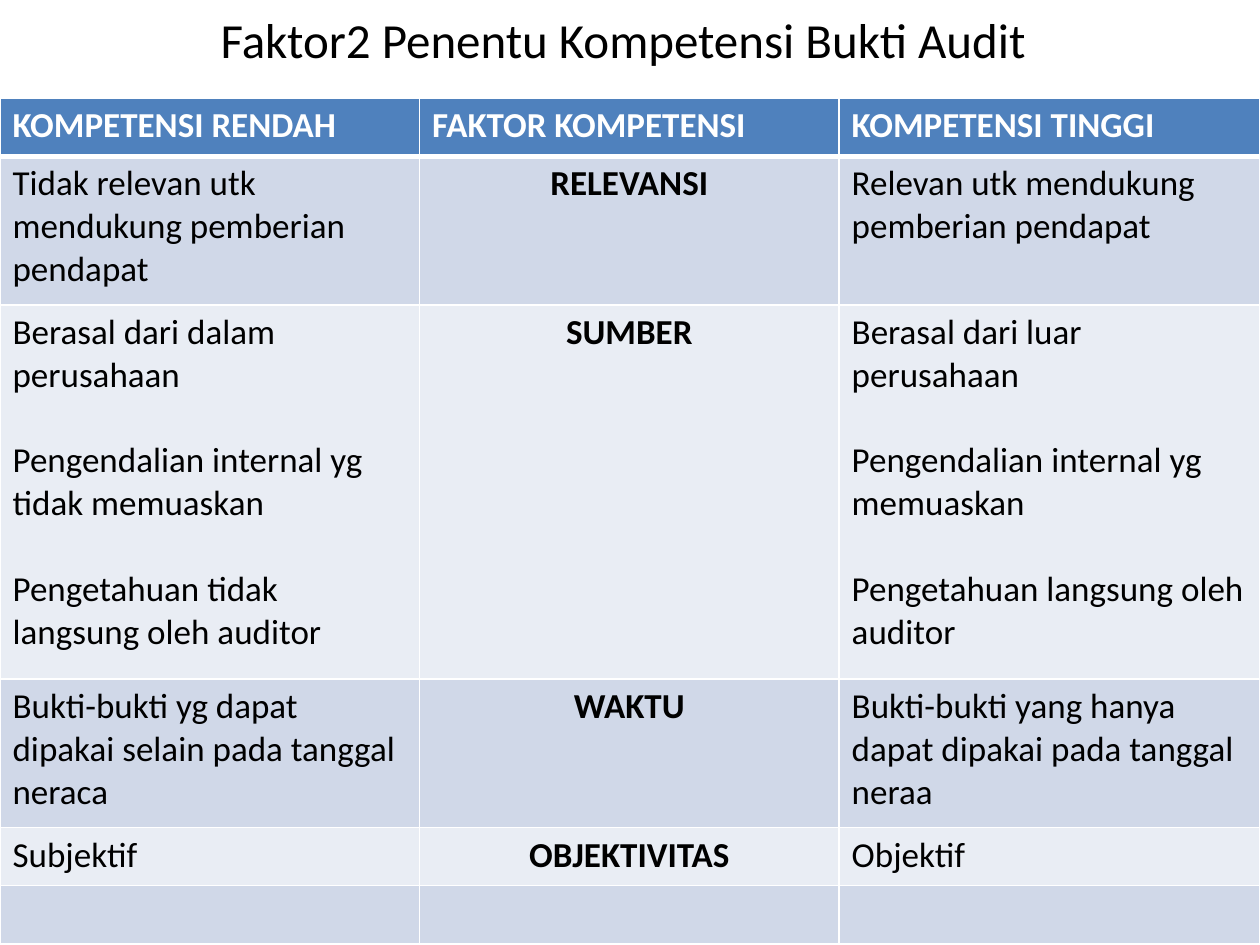
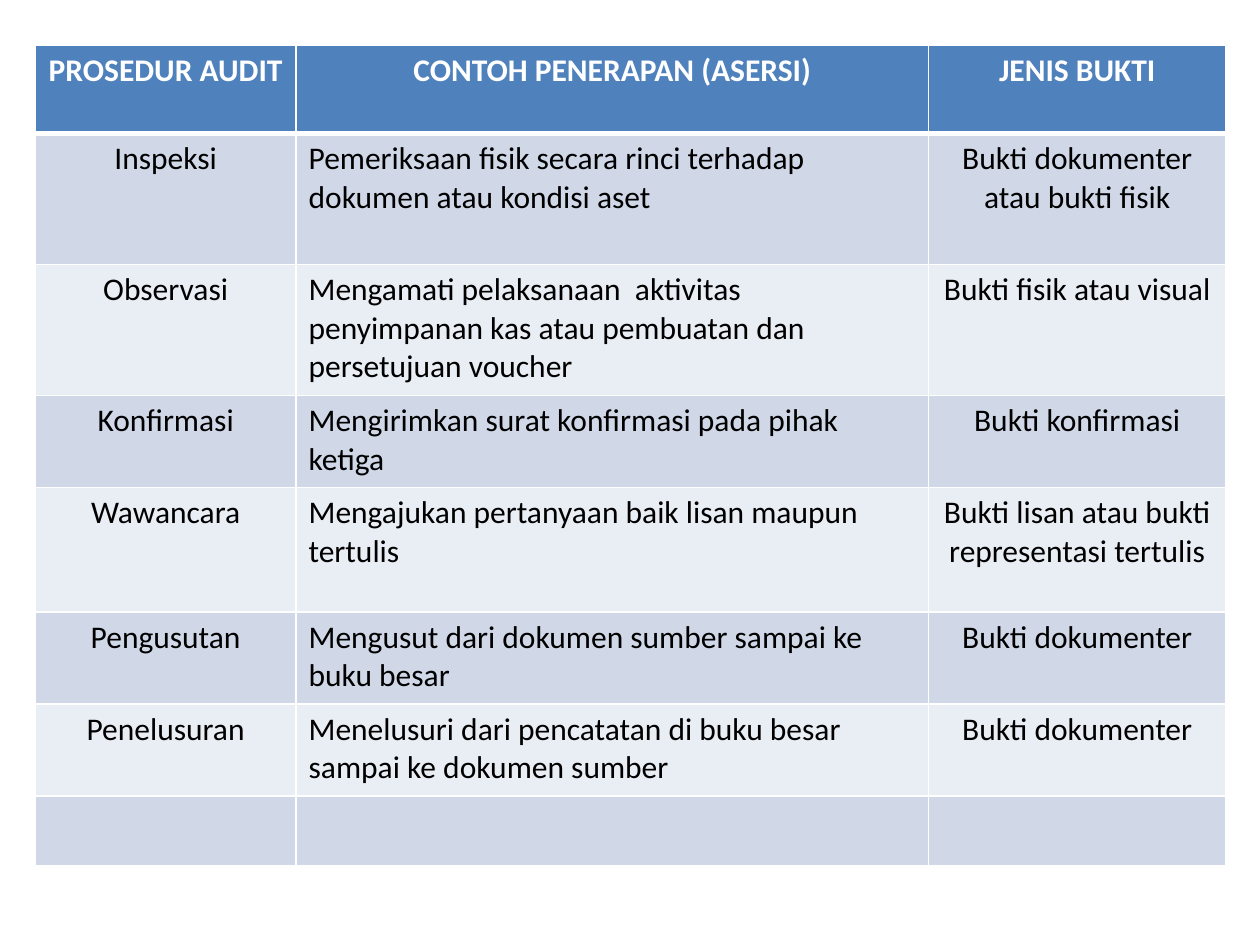
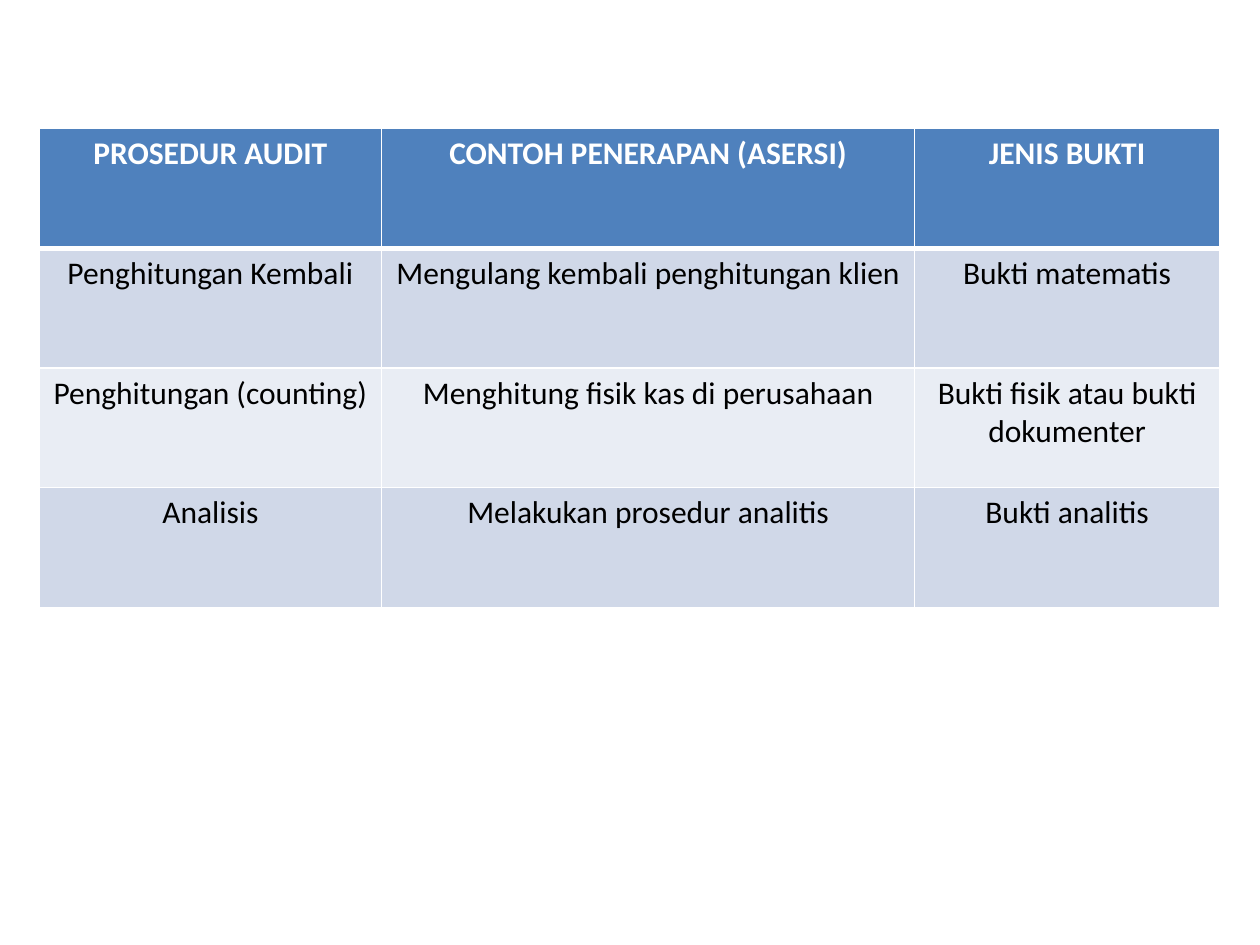
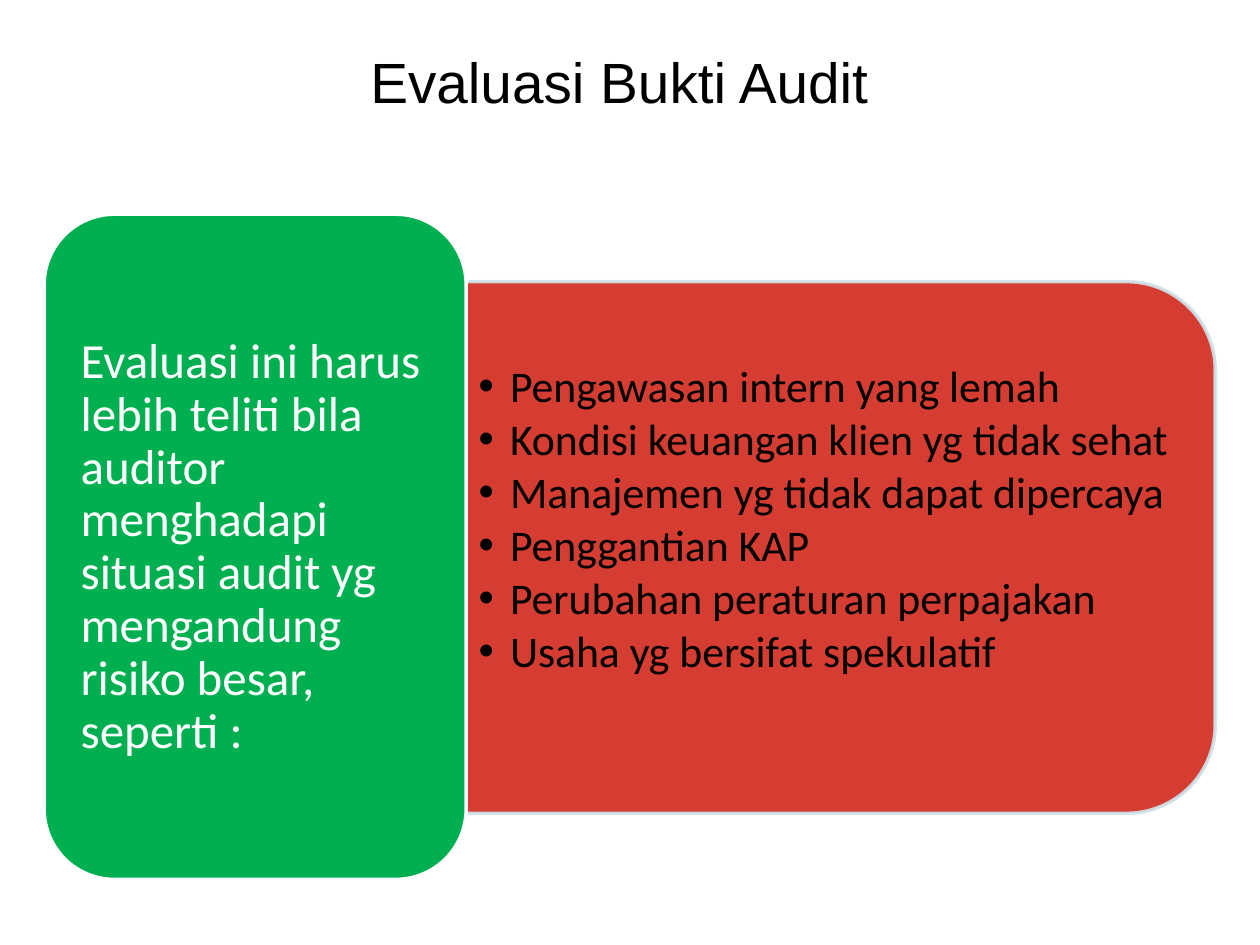
from lxml.etree import SubElement
from pptx import Presentation
from pptx.dml.color import RGBColor
from pptx.enum.shapes import MSO_SHAPE as Preset
from pptx.enum.text import MSO_ANCHOR as Anchor, PP_ALIGN as Align
from pptx.oxml.ns import qn
from pptx.util import Inches, Pt

COLORS = {
    "black": "000000",
    "white": "FFFFFF",
    "header": "4F81BD",
    "odd_row": "D0D8E8",
    "even_row": "E9EDF4",
    "red": "D2291C",
    "pale_blue": "D0E3EA",
    "green": "00B050",
}
BODY_FONT = "Calibri"
PROCEDURE_HEADS = ["PROSEDUR AUDIT", "CONTOH PENERAPAN (ASERSI)", "JENIS BUKTI"]

COMPETENCE_ROWS = [
    ["KOMPETENSI RENDAH", "FAKTOR KOMPETENSI", "KOMPETENSI TINGGI"],
    ["Tidak relevan utk mendukung pemberian pendapat", "RELEVANSI",
     "Relevan utk mendukung pemberian pendapat"],
    ["Berasal dari dalam perusahaan\n"
     "Pengendalian internal yg tidak memuaskan\n"
     "Pengetahuan tidak langsung oleh auditor",
     "SUMBER",
     "Berasal dari luar perusahaan\n"
     "Pengendalian internal yg memuaskan\n"
     "Pengetahuan langsung oleh auditor"],
    ["Bukti-bukti yg dapat dipakai selain pada tanggal neraca", "WAKTU",
     "Bukti-bukti yang hanya dapat dipakai pada tanggal neraa"],
    ["Subjektif", "OBJEKTIVITAS", "Objektif"],
    ["", "", ""],
]
PROCEDURE_ROWS = [
    PROCEDURE_HEADS,
    ["Inspeksi", "Pemeriksaan fisik secara rinci terhadap dokumen atau kondisi aset",
     "Bukti dokumenter atau bukti fisik"],
    ["Observasi",
     "Mengamati pelaksanaan  aktivitas penyimpanan kas atau pembuatan dan persetujuan voucher",
     "Bukti fisik atau visual"],
    ["Konfirmasi", "Mengirimkan surat konfirmasi pada pihak ketiga", "Bukti konfirmasi"],
    ["Wawancara", "Mengajukan pertanyaan baik lisan maupun tertulis",
     "Bukti lisan atau bukti representasi tertulis"],
    ["Pengusutan", "Mengusut dari dokumen sumber sampai ke buku besar", "Bukti dokumenter"],
    ["Penelusuran", "Menelusuri dari pencatatan di buku besar sampai ke dokumen sumber",
     "Bukti dokumenter"],
    ["", "", ""],
]
CALCULATION_ROWS = [
    PROCEDURE_HEADS,
    ["Penghitungan Kembali", "Mengulang kembali penghitungan klien", "Bukti matematis"],
    ["Penghitungan (counting)", "Menghitung fisik kas di perusahaan",
     "Bukti fisik atau bukti dokumenter"],
    ["Analisis", "Melakukan prosedur analitis", "Bukti analitis"],
]
RISK_INTRO = ("Evaluasi ini harus lebih teliti bila auditor menghadapi situasi audit yg "
              "mengandung risiko besar, seperti :")
RISKS = [
    "Pengawasan intern yang lemah",
    "Kondisi keuangan klien yg tidak sehat",
    "Manajemen yg tidak dapat dipercaya",
    "Penggantian KAP",
    "Perubahan peraturan perpajakan",
    "Usaha yg bersifat spekulatif",
]


def color(name):
    return RGBColor.from_string(COLORS[name])


def set_all(target, values):
    for key, value in values.items():
        setattr(target, key, value)


def set_font(font, size, color_name, bold=False, name=BODY_FONT):
    set_all(font, {"size": Pt(size), "name": name, "bold": bold})
    font.color.rgb = color(color_name)


def add_page(deck):
    return deck.slides.add_slide(deck.slide_layouts[6])


def add_text(page, area, lines, size, color_name, font=BODY_FONT,
             frame_values=None, para_values=None, bullet=False):
    box = page.shapes.add_textbox(*map(Inches, area))
    frame = box.text_frame
    set_all(frame, {"word_wrap": True, "vertical_anchor": Anchor.MIDDLE, **(frame_values or {})})
    frame.text = "\n".join(lines)
    for para in frame.paragraphs:
        set_all(para, para_values or {})
        if bullet:
            add_bullet(para)
        set_font(para.font, size, color_name, name=font)


def add_bullet(para):
    properties = para._p.get_or_add_pPr()
    properties.set("marL", str(Inches(0.25)))
    properties.set("indent", str(-Inches(0.25)))
    SubElement(properties, qn("a:buFont"), typeface="Arial")
    SubElement(properties, qn("a:buChar"), char="•")


def add_title(page, area, text, size, font):
    add_text(page, area, [text], size, "black", font, para_values={"alignment": Align.CENTER})


def add_borders(cell, top, bottom):
    properties = cell._tc.get_or_add_tcPr()
    for side, width in {"L": 1, "R": 1, "T": top, "B": bottom}.items():
        line = SubElement(properties, qn(f"a:ln{side}"), w=str(Pt(width)))
        fill = SubElement(line, qn("a:solidFill"))
        SubElement(fill, qn("a:srgbClr"), val=COLORS["white"])


def add_grid(page, left, top, widths, heights, rows, size, aligns, head_align, bold_column=None):
    area = map(Inches, (left, top, sum(widths), sum(heights)))
    table = page.shapes.add_table(len(rows), len(widths), *area).table
    for column, width in zip(table.columns, widths):
        column.width = Inches(width)
    for index, (row, height) in enumerate(zip(rows, heights)):
        table.rows[index].height = Inches(height)
        is_head = index == 0
        fill_name = "header" if is_head else "odd_row" if index % 2 else "even_row"
        for position, text in enumerate(row):
            cell = table.cell(index, position)
            add_borders(cell, 3 if index == 1 else 1, 3 if is_head else 1)
            cell.fill.solid()
            cell.fill.fore_color.rgb = color(fill_name)
            cell.text = text
            for order, para in enumerate(cell.text_frame.paragraphs):
                para.alignment = head_align if is_head else aligns[position]
                if order:
                    para.space_before = Pt(1.22 * size)
                set_font(para.font, size, "white" if is_head else "black",
                         is_head or position == bold_column)


def set_alpha(fill_format, percent):
    for node in fill_format._xPr.iter(qn("a:srgbClr")):
        SubElement(node, qn("a:alpha"), val=str(percent * 1000))


def add_panel(page, preset, area, fill_name, line_name, rotation=0, opacity=100):
    panel = page.shapes.add_shape(preset, *map(Inches, area))
    panel.shadow.inherit = False
    panel.rotation = rotation
    panel.fill.solid()
    panel.fill.fore_color.rgb = color(fill_name)
    panel.line.color.rgb = color(line_name)
    panel.line.width = Pt(2)
    if opacity < 100:
        set_alpha(panel.fill, opacity)


def add_risk_panels(page):
    add_panel(page, Preset.ROUND_2_SAME_RECTANGLE, (4.56, 1.37, 4.22, 5.95),
              "red", "pale_blue", rotation=90, opacity=90)
    add_text(page, (3.7, 2.44, 5.74, 3.81), RISKS, 25, "black",
             frame_values={"margin_bottom": Inches(0.48)},
             para_values={"line_spacing": 0.9, "space_after": Pt(3.3)}, bullet=True)
    add_panel(page, Preset.ROUNDED_RECTANGLE, (0.35, 1.7, 3.35, 5.28), "green", "white")
    insets = {"margin_left": 0.12, "margin_right": 0.12, "margin_top": 0.06, "margin_bottom": 0.06}
    add_text(page, (0.52, 1.87, 3.02, 4.95), [RISK_INTRO], 28, "white",
             frame_values={key: Inches(value) for key, value in insets.items()},
             para_values={"line_spacing": 0.9})


def main():
    deck = Presentation()
    set_all(deck, {"slide_width": Inches(10), "slide_height": Inches(7.5)})
    left, center = Align.LEFT, Align.CENTER

    page = add_page(deck)
    add_title(page, (0.39, 0, 9.11, 0.62), "Faktor2 Penentu Kompetensi Bukti Audit", 28, BODY_FONT)
    add_grid(page, 0, 0.78, [3.33, 3.33, 3.34], [0.46, 1.18, 2.97, 1.18, 0.46, 0.46],
             COMPETENCE_ROWS, 20, [left, center, left], left, bold_column=1)

    page = add_page(deck)
    add_grid(page, 0.28, 0.36, [2.07, 5.02, 2.36],
             [0.7, 1.04, 1.04, 0.73, 0.99, 0.73, 0.73, 0.55],
             PROCEDURE_ROWS, 18, [center, left, center], center)

    page = add_page(deck)
    add_grid(page, 0.31, 1.02, [2.72, 4.23, 2.42], [0.95] * len(CALCULATION_ROWS),
             CALCULATION_ROWS, 18, [center] * 3, center)

    page = add_page(deck)
    add_title(page, (0.5, 0.3, 8.83, 0.69), "Evaluasi Bukti Audit", 32.4, "Arial")
    add_risk_panels(page)

    deck.save("out.pptx")


if __name__ == "__main__":
    main()
